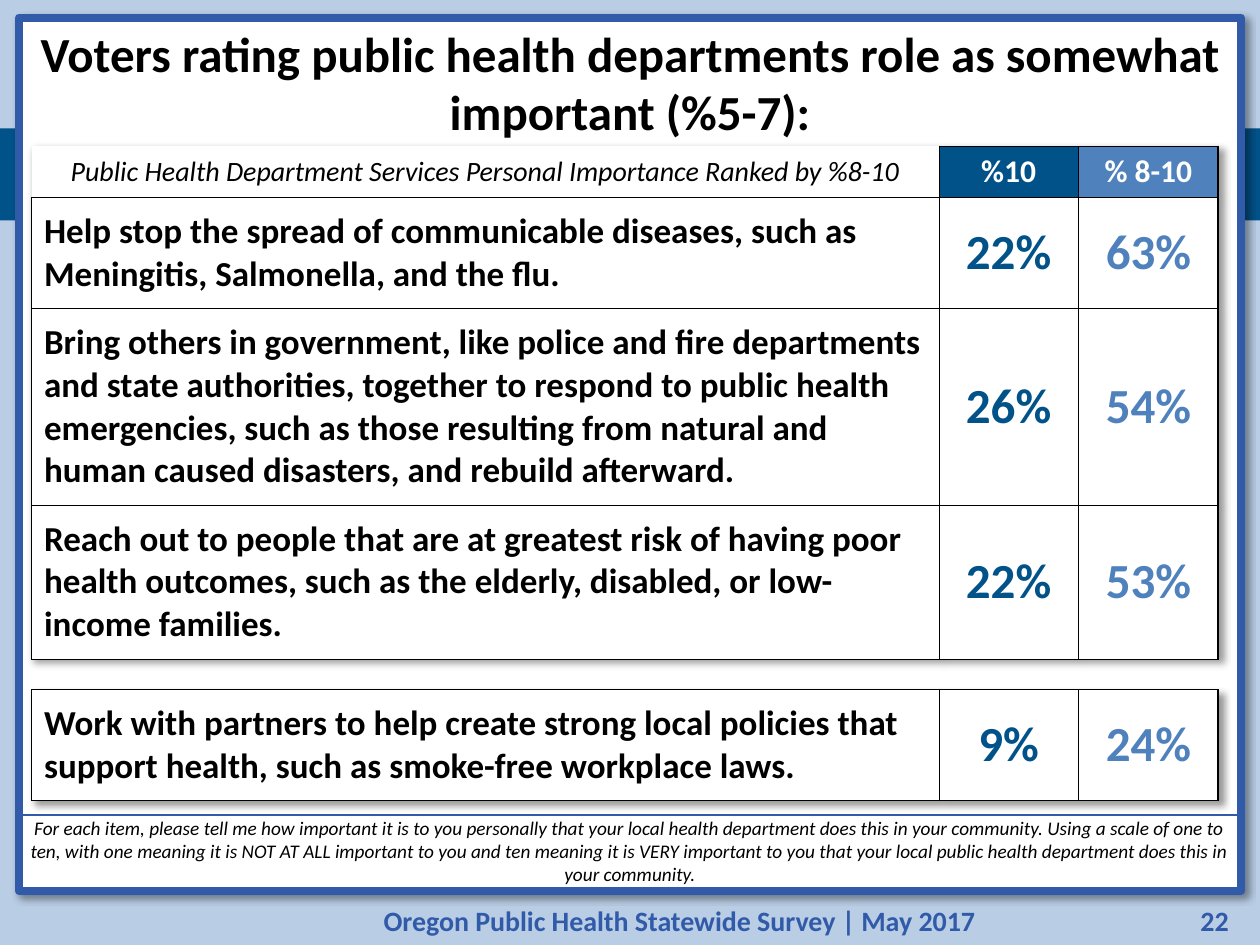
import pptx
import pptx.util
import pptx.dml.color
import pptx.enum.shapes
import pptx.enum.text
import pptx.oxml
import pptx.oxml.ns

Pt = pptx.util.Pt
ALIGN = pptx.enum.text.PP_ALIGN
ANCHOR = pptx.enum.text.MSO_ANCHOR
RECTANGLE = pptx.enum.shapes.MSO_SHAPE.RECTANGLE

COLORS = {
    "background": "B9CDE5",
    "navy": "02528A",
    "frame": "315BA8",
    "blue": "4F81BD",
    "white": "FFFFFF",
    "black": "000000",
}
COLUMN_WIDTHS = [518.4, 79.9, 79.9]
TABLE_LEFT = 18
HEADER = ["Public Health Department Services Personal Importance Ranked by %8-10", "%10", "% 8-10"]
TOP_SERVICES = [
    ["Help stop the spread of communicable diseases, such as Meningitis, Salmonella, "
     "and the flu.", "22%", "63%"],
    ["Bring others in government, like police and fire departments and state authorities, "
     "together to respond to public health emergencies, such as those resulting from natural "
     "and human caused disasters, and rebuild afterward.", "26%", "54%"],
    ["Reach out to people that are at greatest risk of having poor health outcomes, such as "
     "the elderly, disabled, or low-income families.", "22%", "53%"],
]
LOWEST_SERVICE = [
    "Work with partners to help create strong local policies that support health, such as "
    "smoke-free workplace laws.", "9%", "24%"]
QUESTION = (
    "For each item, please tell me how important it is to you personally that your local health "
    "department does this in your community. Using a scale of one to ten, with one meaning it is "
    "NOT AT ALL important to you and ten meaning it is VERY important to you that your local "
    "public health department does this in your community.")

HEADER_FORMATS = [
    {"size": Pt(16), "italic": True, "color": "black"},
    {"size": Pt(18), "bold": True, "color": "white"},
    {"size": Pt(18), "bold": True, "color": "white"},
]
SERVICE_FORMATS = [
    {"size": Pt(20), "bold": True, "color": "black"},
    {"size": Pt(28), "bold": True, "color": "navy"},
    {"size": Pt(28), "bold": True, "color": "blue"},
]


def rgb(name):
    return pptx.dml.color.RGBColor.from_string(COLORS[name])


def set_attributes(target, values):
    for name, value in values.items():
        setattr(target, name, value)


def write_text(text_frame, text, alignment, font_format):
    text_frame.text = text
    paragraph = text_frame.paragraphs[0]
    paragraph.alignment = alignment
    values = {"name": "Calibri", **font_format}
    paragraph.font.color.rgb = rgb(values.pop("color"))
    set_attributes(paragraph.font, values)


def set_frame(text_frame, anchor, margins):
    left, top, right, bottom = map(Pt, margins)
    set_attributes(text_frame, {
        "word_wrap": True, "vertical_anchor": anchor,
        "auto_size": pptx.enum.text.MSO_AUTO_SIZE.NONE,
        "margin_left": left, "margin_top": top,
        "margin_right": right, "margin_bottom": bottom})


def shadow_effect():
    return pptx.oxml.parse_xml(
        f'<a:effectLst {pptx.oxml.ns.nsdecls("a")}>'
        '<a:outerShdw blurRad="50800" dist="38100" dir="2700000" algn="tl" rotWithShape="0">'
        f'<a:srgbClr val="{COLORS["black"]}"><a:alpha val="40000"/></a:srgbClr>'
        '</a:outerShdw></a:effectLst>')


def add_rectangle(slide, box, fill=None, line=None, line_width=0):
    shape = slide.shapes.add_shape(RECTANGLE, *map(Pt, box))
    shape.shadow.inherit = False
    if fill:
        shape.fill.solid()
        shape.fill.fore_color.rgb = rgb(fill)
    else:
        shape.fill.background()
    if line:
        shape.line.color.rgb = rgb(line)
        shape.line.width = Pt(line_width)
    else:
        shape.line.fill.background()
    return shape


def add_panel(slide):
    panel = add_rectangle(slide, (10.8, 10.1, 698.4, 499), "white", "frame", 4.5)
    properties = panel.element.spPr
    properties.remove(properties.find(pptx.oxml.ns.qn("a:effectLst")))
    properties.append(shadow_effect())


def add_footer_text(slide, box, text, alignment):
    text_box = slide.shapes.add_textbox(*map(Pt, box))
    set_frame(text_box.text_frame, ANCHOR.MIDDLE, (7.2, 3.6, 7.2, 3.6))
    write_text(text_box.text_frame, text, alignment,
               {"size": Pt(16), "bold": True, "color": "frame"})


def add_question(slide):
    shape = add_rectangle(slide, (10.8, 465.8, 698.4, 43.6), line="frame", line_width=0.75)
    set_frame(shape.text_frame, ANCHOR.BOTTOM, (5, 0, 5, 3.6))
    write_text(shape.text_frame, QUESTION, ALIGN.CENTER,
               {"size": Pt(11), "italic": True, "color": "black"})


def set_borders(cell, widths):
    properties = cell._tc.get_or_add_tcPr()
    for index, (side, width) in enumerate(zip("LRTB", widths)):
        paint = f'<a:solidFill><a:srgbClr val="{COLORS["black"]}"/></a:solidFill>'
        properties.insert(index, pptx.oxml.parse_xml(
            f'<a:ln{side} {pptx.oxml.ns.nsdecls("a")} w="{Pt(width)}">'
            f'{paint if width else "<a:noFill/>"}</a:ln{side}>'))


def format_cell(cell, text, column, is_header):
    formats = HEADER_FORMATS if is_header else SERVICE_FORMATS
    is_label = column == 0
    side, edge = 7.2, 3.6
    if is_label:
        side, edge = (0, 3.6) if is_header else (7.2, 7.2)
    set_attributes(cell, {
        "vertical_anchor": ANCHOR.MIDDLE, "margin_left": Pt(side), "margin_right": Pt(side),
        "margin_top": Pt(edge), "margin_bottom": Pt(edge)})
    alignment = ALIGN.LEFT if is_label and not is_header else ALIGN.CENTER
    write_text(cell.text_frame, text, alignment, formats[column])
    cell.fill.solid()
    cell.fill.fore_color.rgb = rgb(["white", "navy", "blue"][column] if is_header else "white")
    outer = 0 if is_label and is_header else 0.25
    set_borders(cell, (outer, 1.5 if column == 2 else 0.25, outer, 0.25))


def add_service_table(slide, top, rows, heights, has_header):
    frame = slide.shapes.add_table(
        len(rows), len(COLUMN_WIDTHS), Pt(TABLE_LEFT), Pt(top),
        Pt(sum(COLUMN_WIDTHS)), Pt(sum(heights)))
    table = frame.table
    set_attributes(table, {"first_row": has_header, "horz_banding": False})
    table._tbl.tblPr.insert(0, shadow_effect())
    for column, width in zip(table.columns, COLUMN_WIDTHS):
        column.width = Pt(width)
    for row_index, (values, height) in enumerate(zip(rows, heights)):
        table.rows[row_index].height = Pt(height)
        for column_index, text in enumerate(values):
            format_cell(table.cell(row_index, column_index), text, column_index,
                        has_header and row_index == 0)


def place_title(slide):
    title = slide.shapes.title
    title.element.getparent().append(title.element)
    set_attributes(title, {"left": Pt(10.8), "top": Pt(5.8),
                           "width": Pt(698.4), "height": Pt(82)})
    set_frame(title.text_frame, ANCHOR.MIDDLE, (2.9, 3.6, 2.9, 3.6))
    write_text(title.text_frame,
               "Voters rating public health departments role as somewhat important (%5-7):",
               ALIGN.CENTER, {"size": Pt(28), "bold": True, "color": "black"})


def main():
    presentation = pptx.Presentation()
    presentation.slide_width = Pt(720)
    presentation.slide_height = Pt(540)
    slide = presentation.slides.add_slide(presentation.slide_layouts[5])
    slide.background.fill.solid()
    slide.background.fill.fore_color.rgb = rgb("background")
    add_rectangle(slide, (0, 73.4, 720, 52.6), "navy")
    add_footer_text(slide, (116.6, 512.8, 543.6, 26.6),
                    "Oregon Public Health Statewide Survey | May 2017", ALIGN.CENTER)
    add_footer_text(slide, (660.2, 512.8, 49, 26.6), "22", ALIGN.RIGHT)
    add_panel(slide)
    add_question(slide)
    add_service_table(slide, 83.5, [HEADER, *TOP_SERVICES], [29.2, 63.4, 112.5, 88], True)
    add_service_table(slide, 393.8, [LOWEST_SERVICE], [63.4], False)
    place_title(slide)
    presentation.save("out.pptx")


if __name__ == "__main__":
    main()
